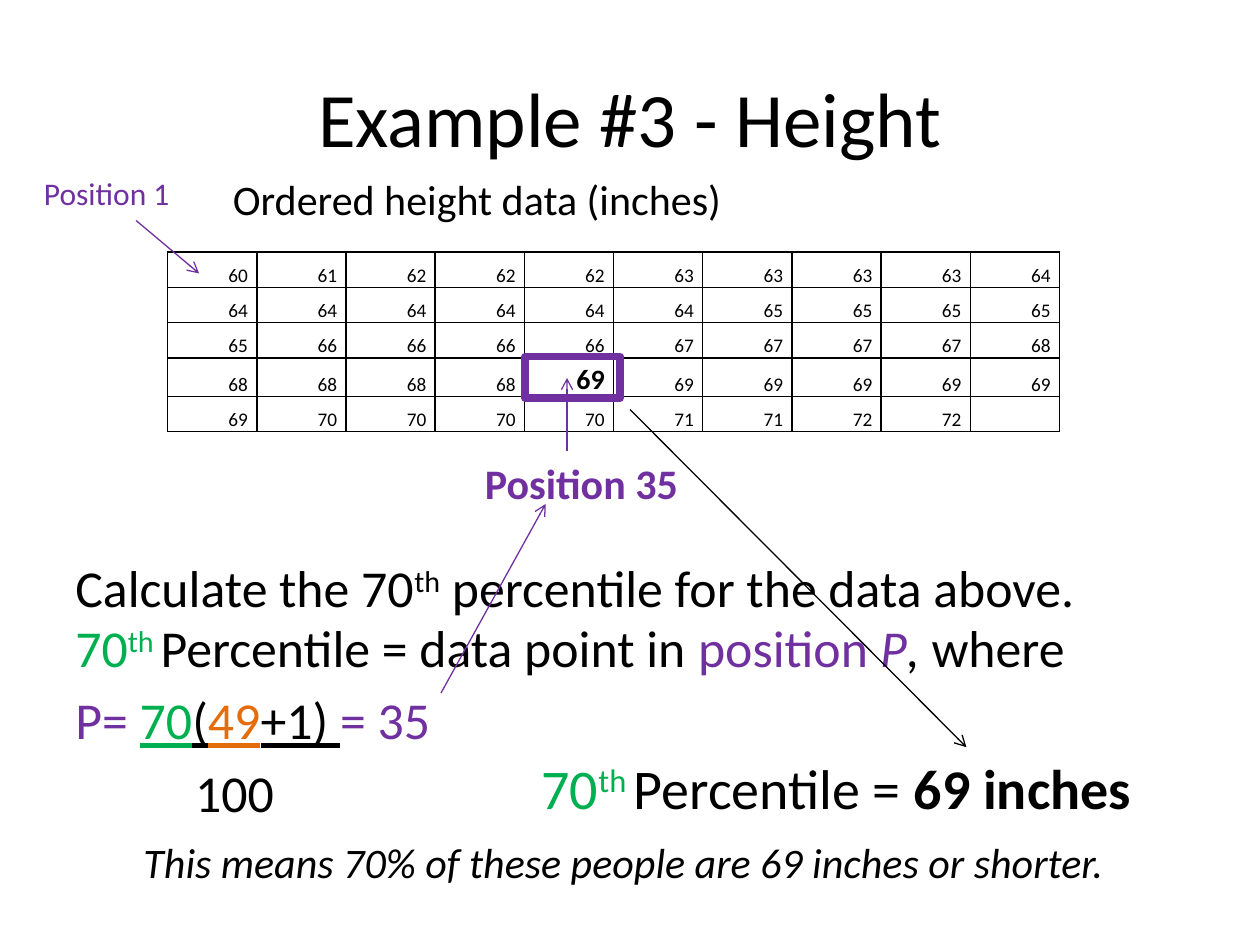
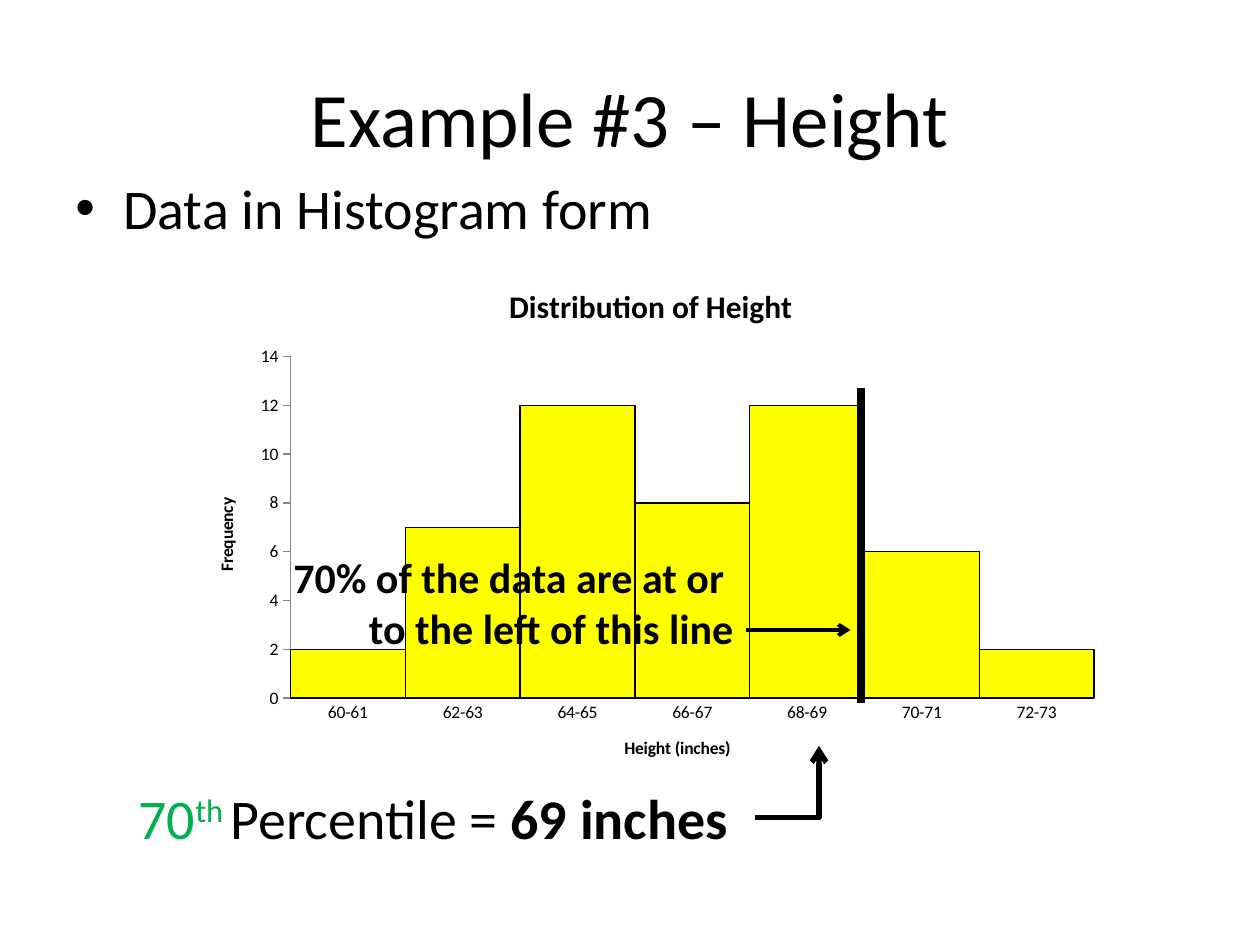
from lxml import etree
from pptx import Presentation
from pptx.chart.data import CategoryChartData
from pptx.dml.color import RGBColor
from pptx.enum.chart import XL_CHART_TYPE, XL_TICK_MARK
from pptx.enum.shapes import MSO_CONNECTOR, MSO_SHAPE
from pptx.enum.text import MSO_ANCHOR, PP_ALIGN
from pptx.oxml import parse_xml
from pptx.oxml.ns import nsdecls, qn
from pptx.util import Inches, Pt

BLACK = RGBColor(0x00, 0x00, 0x00)
PURPLE = RGBColor(0x70, 0x30, 0xA0)
GREEN = RGBColor(0x00, 0xB0, 0x50)
ORANGE = RGBColor(0xE4, 0x6C, 0x0A)
YELLOW = RGBColor(0xFF, 0xFF, 0x00)
GRAY = RGBColor(0x86, 0x86, 0x86)
FONT = "Calibri"
STRAIGHT, ELBOW = MSO_CONNECTOR.STRAIGHT, MSO_CONNECTOR.ELBOW
CENTER, RIGHT = PP_ALIGN.CENTER, PP_ALIGN.RIGHT
MIDDLE, BOTTOM = MSO_ANCHOR.MIDDLE, MSO_ANCHOR.BOTTOM
TITLE_BOX = (0.5, 0.3, 9, 1.25)
TITLE_STYLE = {"size": 44, "align": CENTER, "anchor": MIDDLE}
RESULT = [[("70", {"color": GREEN}), ("th ", {"color": GREEN, "raised": True}),
           "Percentile = ", ("69 inches", {"bold": True})]]


def write(text_frame, paragraphs, size, color=BLACK, bold=False, italic=False,
          align=None, anchor=None, wrap=None, line_spacing=None, space_before=None):
    """Fill a text frame; a run is a string or a (string, own format) pair."""
    if anchor is not None:
        text_frame.vertical_anchor = anchor
    if wrap is not None:
        text_frame.word_wrap = wrap
    if isinstance(paragraphs, str):
        paragraphs = [[paragraphs]]
    for index, runs in enumerate(paragraphs):
        paragraph = text_frame.add_paragraph() if index else text_frame.paragraphs[0]
        paragraph.alignment = align
        paragraph.line_spacing = line_spacing
        paragraph.space_before = space_before
        for item in runs:
            words, own = (item, {}) if isinstance(item, str) else item
            pieces = words.split("\n")
            for number, piece in enumerate(pieces):
                if number:
                    paragraph.add_line_break()
                run = paragraph.add_run()
                run.text = piece
                font = run.font
                font.name, font.size = FONT, Pt(size)
                font.color.rgb = own.get("color", color)
                font.bold = own.get("bold", bold)
                font.italic = own.get("italic", italic)
                if own.get("underline"):
                    font.underline = True
                if own.get("raised"):
                    font._element.set("baseline", "30000")


def draw_line(slide, start, end, color=BLACK, width=0.75, arrow=True, kind=STRAIGHT):
    line = slide.shapes.add_connector(kind, *map(Inches, start + end))
    line.line.color.rgb = color
    line.line.width = Pt(width)
    if arrow:
        etree.SubElement(line.line._get_or_add_ln(), qn("a:tailEnd"), type="arrow")
    properties = line._element.spPr
    etree.SubElement(properties, qn("a:effectLst"))
    if kind == ELBOW:  # a single corner
        properties.find(qn("a:prstGeom")).set("prst", "bentConnector2")


presentation = Presentation()
presentation.slide_width, presentation.slide_height = Inches(10), Inches(7.5)
blank = presentation.slide_layouts[6]

# Slide 1: percentile from the ordered table
slide = presentation.slides.add_slide(blank)


def text_box(at):
    return slide.shapes.add_textbox(*map(Inches, at)).text_frame


write(text_box(TITLE_BOX), "Example #3 - Height", wrap=True, **TITLE_STYLE)

# Table of ordered heights
HEIGHT_COUNTS = {60: 1, 61: 1, 62: 3, 63: 4, 64: 7, 65: 5, 66: 4, 67: 4,
                 68: 5, 69: 7, 70: 4, 71: 2, 72: 2}
heights = [height for height, count in HEIGHT_COUNTS.items() for _ in range(count)]
COLUMNS, ROWS, POSITION = 10, 5, 35
table = slide.shapes.add_table(ROWS, COLUMNS, Inches(1.33), Inches(2),
                               Inches(7.08), Inches(1.42)).table
table.first_row = table.horz_banding = False
for row in table.rows:
    row.height = Inches(0.28)
for index in range(ROWS * COLUMNS):
    cell = table.cell(*divmod(index, COLUMNS))
    cell.margin_left = cell.margin_right = Inches(0.07)
    cell.margin_top = cell.margin_bottom = 0
    cell.fill.background()
    marked = index + 1 == POSITION
    if index < len(heights):
        write(cell.text_frame, str(heights[index]), 16 if marked else 11,
              bold=marked, align=RIGHT, line_spacing=1.15)
    else:
        etree.SubElement(cell.text_frame.paragraphs[0]._p, qn("a:endParaRPr"), sz="1100")
    cell.vertical_anchor = BOTTOM
    for order, side in enumerate(("lnL", "lnR", "lnT", "lnB")):
        cell._tc.tcPr.insert(order, parse_xml(
            f'<a:{side} {nsdecls("a")} w="12700"><a:solidFill>'
            f'<a:srgbClr val="{BLACK}"/></a:solidFill></a:{side}>'))

write(text_box((1.75, 1.33, 4.11, 0.5)), "Ordered height data (inches)", 24, wrap=False)

# Calculation
calculation = text_box((0.5, 4.46, 9, 2.08))
write(calculation, [
    ["Calculate the 70", ("th", {"raised": True}), " percentile for the data above."],
    [("70", {"color": GREEN}), ("th ", {"color": GREEN, "raised": True}),
     "Percentile = data point in ", ("position ", {"color": PURPLE}),
     ("P", {"color": PURPLE, "italic": True}), (", ", {"italic": True}), "where"],
    [("P= ", {"color": PURPLE}), ("70", {"color": GREEN, "underline": True}),
     ("(", {"underline": True}), ("49", {"color": ORANGE, "underline": True}),
     ("+1) ", {"underline": True}), ("= 35", {"color": PURPLE})],
    ["100"],
], 29.6, wrap=True, space_before=Pt(5.9))
for paragraph in calculation.paragraphs[:2]:
    paragraph.line_spacing = 0.8
calculation.paragraphs[3]._p.get_or_add_pPr().set("marL", str(Inches(0.95)))

# Position markers
draw_line(slide, (1.08, 1.75), (1.58, 2.17), PURPLE)
write(text_box((0.25, 1.33, 1.21, 0.4)), "Position 1", 18, color=PURPLE, wrap=False)
draw_line(slide, (4.5, 3.58), (4.5, 3), PURPLE)
write(text_box((3.75, 3.58, 1.75, 0.5)), "Position 35", 24, color=PURPLE, bold=True,
      wrap=False)
frame = slide.shapes.add_shape(MSO_SHAPE.RECTANGLE, Inches(4.17), Inches(2.83),
                               Inches(0.75), Inches(0.33))
frame.shadow.inherit = False
frame.fill.background()
frame.line.color.rgb = PURPLE
frame.line.width = Pt(4.5)
draw_line(slide, (3.5, 5.5), (4.33, 4), PURPLE)

# Result and meaning
write(text_box((4.2, 5.93, 4.99, 0.64)), RESULT, 32, wrap=True)
draw_line(slide, (5, 3.25), (7.67, 5.93))
write(text_box((1.04, 6.59, 7.92, 0.5)),
      "This means 70% of these people are 69 inches or shorter.", 24, italic=True, wrap=True)

# Slide 2: percentile on the histogram
slide = presentation.slides.add_slide(blank)
write(text_box(TITLE_BOX), "Example #3 – Height", wrap=True, **TITLE_STYLE)
bullet = text_box((0.5, 1.33, 9, 0.67))
write(bullet, "Data in Histogram form", 32, wrap=True, space_before=Pt(6.4))
properties = bullet.paragraphs[0]._p.get_or_add_pPr()
properties.set("marL", str(Inches(0.38)))
properties.set("indent", str(Inches(-0.38)))
etree.SubElement(properties, qn("a:buFont"), typeface="Arial")
etree.SubElement(properties, qn("a:buChar"), char="•")

# Histogram
data = CategoryChartData()
data.categories = [f"{low}-{low + 1}" for low in range(60, 73, 2)]
data.add_series("Series 1", (2, 7, 12, 8, 12, 6, 2))
chart = slide.shapes.add_chart(XL_CHART_TYPE.COLUMN_CLUSTERED, Inches(1.5), Inches(2.08),
                               Inches(7.33), Inches(4.17), data).chart
chart.font.name, chart.font.size = FONT, Pt(10)
chart.font.color.rgb = BLACK
chart.has_legend = False
chart.has_title = True
write(chart.chart_title.text_frame, "Distribution of Height", 18, bold=True)
plot = chart.plots[0]
plot.gap_width = 0
plot.vary_by_categories = False
bars = plot.series[0].format
bars.fill.solid()
bars.fill.fore_color.rgb = YELLOW
bars.line.color.rgb = BLACK
bars.line.width = Pt(0.75)
for axis, title, tick in ((chart.category_axis, "Height (inches)", XL_TICK_MARK.NONE),
                          (chart.value_axis, "Frequency", XL_TICK_MARK.OUTSIDE)):
    axis.has_major_gridlines = False
    axis.major_tick_mark, axis.minor_tick_mark = tick, XL_TICK_MARK.NONE
    axis.format.line.color.rgb = GRAY
    axis.has_title = True
    write(axis.axis_title.text_frame, title, 10, bold=True)
chart.value_axis.minimum_scale, chart.value_axis.maximum_scale = 0, 14
chart.value_axis.major_unit = 2

# Fixed plot area, so that the percentile line meets the bar edge
plot_area = chart._chartSpace.chart.plotArea
for layout in plot_area.findall(qn("c:layout")):
    plot_area.remove(layout)
settings = [("layoutTarget", "inner"), ("xMode", "edge"), ("yMode", "edge"),
            ("x", 0.11), ("y", 0.18), ("w", 0.87), ("h", 0.65)]
layout = etree.Element(qn("c:layout"))
manual = etree.SubElement(layout, qn("c:manualLayout"))
for name, value in settings:
    etree.SubElement(manual, qn(f"c:{name}"), val=str(value))
plot_area.insert(0, layout)

# Percentile line and labels
write(text_box((1, 6.17, 4.99, 0.64)), RESULT, 32, wrap=True)
draw_line(slide, (5.99, 6.49), (6.5, 5.92), width=3, kind=ELBOW)
draw_line(slide, (6.83, 3.08), (6.83, 5.58), width=4.5, arrow=False)
write(text_box((2, 4.33, 3.92, 0.91)), "70% of the data are at or \nto the left of this line",
      24, bold=True, align=RIGHT, wrap=True)
draw_line(slide, (5.92, 5), (6.75, 5), width=2.25)

presentation.save("out.pptx")
